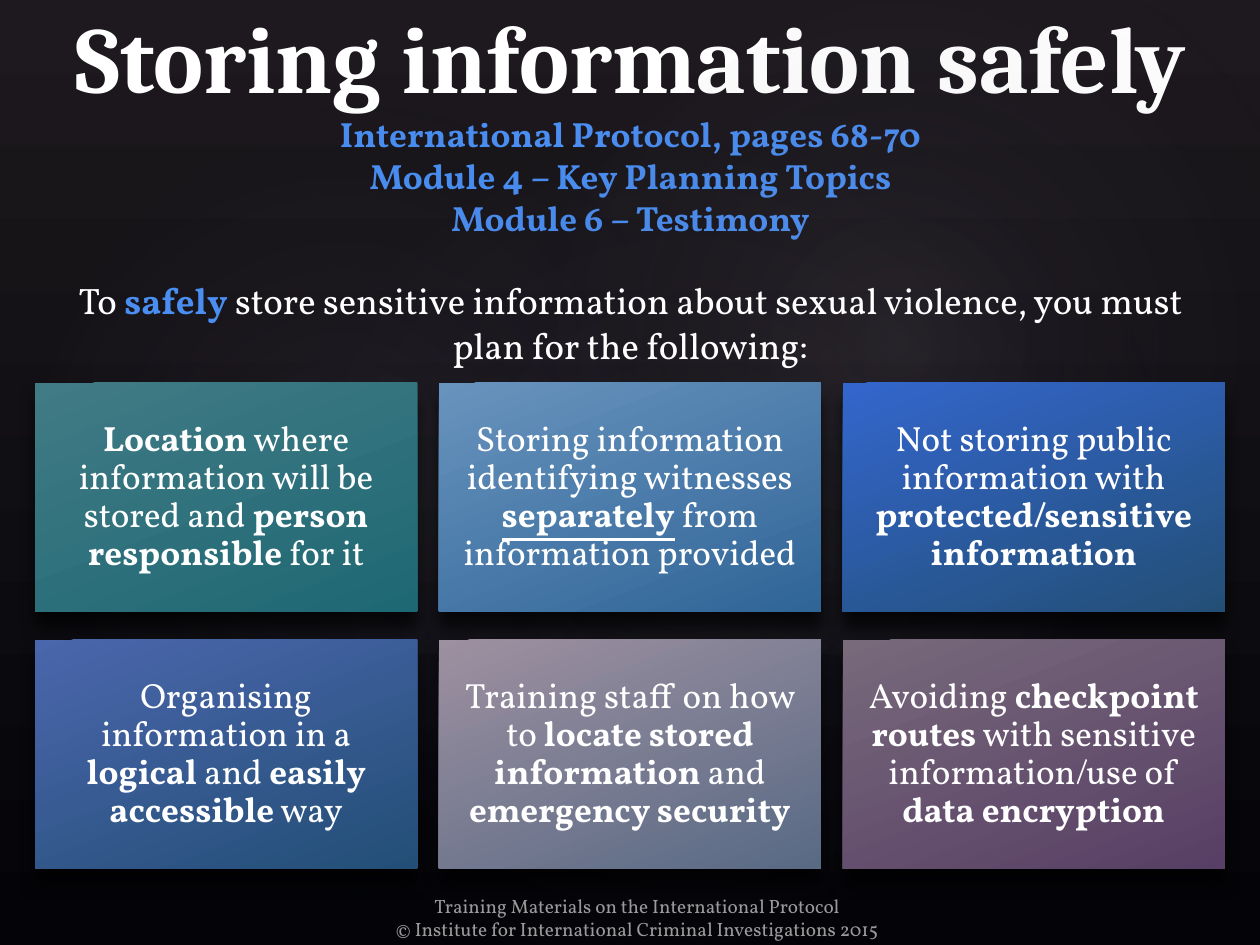
from lxml.etree import SubElement
from pptx import Presentation
from pptx.dml.color import RGBColor
from pptx.enum.shapes import MSO_SHAPE as Shape
from pptx.enum.text import MSO_ANCHOR as Anchor, MSO_AUTO_SIZE as AutoSize, PP_ALIGN as Align
from pptx.oxml import parse_xml
from pptx.oxml.ns import nsdecls, qn
from pptx.util import Cm, Pt

WHITE = RGBColor(0xFF, 0xFF, 0xFF)
GREY = RGBColor(0x9A, 0x9A, 0x9B)
BLUE = RGBColor(0x4A, 0x8E, 0xF2)
BACKGROUND_TOP = RGBColor(0x1D, 0x19, 0x1E)
BACKGROUND_BOTTOM = RGBColor(0x04, 0x04, 0x08)
GLOW = RGBColor(0xC4, 0xBC, 0xC6)
GLOW_EDGE = RGBColor(0x24, 0x28, 0x52)
TEAL, TEAL_DARK = RGBColor(0x41, 0x7B, 0x85), RGBColor(0x1E, 0x68, 0x74)
SKY, SKY_DARK = RGBColor(0x68, 0x93, 0xBD), RGBColor(0x30, 0x65, 0x98)
ROYAL, NAVY = RGBColor(0x33, 0x66, 0xCC), RGBColor(0x23, 0x4F, 0x77)
INDIGO = RGBColor(0x4A, 0x66, 0xAC)
MAUVE, SLATE = RGBColor(0x9D, 0x90, 0xA0), RGBColor(0x59, 0x6A, 0x85)
PLUM, PURPLE = RGBColor(0x78, 0x69, 0x7B), RGBColor(0x57, 0x3F, 0x65)

HEADING_FONT, BODY_FONT = "Cambria", "Vollkorn"

TITLE_LINES = [
    "Storing information safely",
    "International Protocol, pages 68-70",
    "Module 4 – Key Planning Topics",
    "Module 6 – Testimony",
]
INTRO = [
    ("To ", ""),
    ("safely", "bold accent"),
    (" store sensitive information about sexual violence, you must plan for the following:", ""),
]
FOOTER_LINES = [
    "Training Materials on the International Protocol",
    "© Institute for International Criminal Investigations 2015",
]
CARDS = [
    (TEAL, TEAL_DARK, [
        ("Location", "bold"), (" where information will be stored and ", ""),
        ("person responsible", "bold"), (" for it", "")]),
    (SKY, SKY_DARK, [
        ("Storing information identifying witnesses ", ""),
        ("separately", "bold underline"), (" from information provided", "")]),
    (ROYAL, NAVY, [
        ("Not storing public information with ", ""),
        ("protected/sensitive information", "bold")]),
    (INDIGO, NAVY, [
        ("Organising information in a ", ""), ("logical", "bold"), (" and ", ""),
        ("easily accessible", "bold"), (" way", "")]),
    (MAUVE, SLATE, [
        ("Training staff on how to ", ""), ("locate stored information ", "bold"),
        ("and ", ""), ("emergency security", "bold")]),
    (PLUM, PURPLE, [
        ("Avoiding ", ""), ("checkpoint routes", "bold"),
        (" with sensitive information/use of ", ""), ("data encryption", "bold")]),
]
GLOWS = [
    (3.81, 2.9, 20.12, 15.85, 328.7, 7),
    (-0.76, 3.25, 15.39, 12.45, 294.3, 8),
    (9.09, 0.33, 18.01, 13.21, 328.7, 8),
]


def format_run(run, size, color, name=BODY_FONT, bold=False):
    """Set the typeface, size, colour and weight of a run."""
    run.font.name, run.font.size, run.font.bold = name, Pt(size), bold
    run.font.color.rgb = color


def add_styled_runs(paragraph, parts, size):
    """Fill a centred paragraph with runs styled by keyword."""
    paragraph.alignment = Align.CENTER
    for text, style in parts:
        run = paragraph.add_run()
        run.text = text
        format_run(run, size, BLUE if "accent" in style else WHITE, bold="bold" in style)
        if "underline" in style:
            run.font.underline = True


def set_gradient(fill, start, end, angle):
    """Apply a two-colour linear gradient."""
    fill.gradient()
    fill.gradient_angle = angle
    for stop, color in zip(fill.gradient_stops, (start, end)):
        stop.color.rgb = color


def add_glow(slide, left, top, width, height, rotation, opacity):
    """Add a soft radial ellipse of light."""
    shape = slide.shapes.add_shape(Shape.OVAL, Cm(left), Cm(top), Cm(width), Cm(height))
    shape.rotation = rotation
    shape.shadow.inherit = False
    shape.line.fill.background()
    properties = shape.element.spPr
    properties.find(qn("a:prstGeom")).addnext(parse_xml(
        f'<a:gradFill {nsdecls("a")}><a:gsLst>'
        f'<a:gs pos="0"><a:srgbClr val="{GLOW}"><a:alpha val="{opacity * 1000}"/></a:srgbClr></a:gs>'
        f'<a:gs pos="58000"><a:srgbClr val="{GLOW_EDGE}"><a:alpha val="0"/></a:srgbClr></a:gs>'
        '</a:gsLst><a:path path="circle"><a:fillToRect l="50000" t="50000" r="50000" b="50000"/>'
        '</a:path></a:gradFill>'))


def add_drop_shadow(shape):
    """Give a shape a soft black shadow below it."""
    shape.shadow.inherit = False
    effects = shape.element.spPr.find(qn("a:effectLst"))
    shadow = SubElement(effects, qn("a:outerShdw"), blurRad=str(Pt(9)), dist=str(Pt(9)),
                        dir="5400000", algn="ctr", rotWithShape="0")
    color = SubElement(shadow, qn("a:srgbClr"), val="000000")
    SubElement(color, qn("a:alpha"), val="70000")


def add_card(slide, index, start, end, parts):
    """Add one card of the three-column grid."""
    row, column = divmod(index, 3)
    shape = slide.shapes.add_shape(Shape.RECTANGLE, Cm(0.71 + 8.14 * column),
                                   Cm(7.72 + 5.18 * row), Cm(7.7), Cm(4.6))
    set_gradient(shape.fill, start, end, 291)
    shape.line.fill.background()
    add_drop_shadow(shape)
    frame = shape.text_frame
    frame.word_wrap = True
    frame.vertical_anchor = Anchor.MIDDLE
    frame.margin_left = frame.margin_right = Cm(0.21)
    frame.margin_top = frame.margin_bottom = Cm(0.23)
    paragraph = frame.paragraphs[0]
    paragraph.line_spacing = 0.9
    add_styled_runs(paragraph, parts, 20)


def add_text_box(slide, left, top, width, height):
    """Add a wrapping text box and return its text frame."""
    frame = slide.shapes.add_textbox(Cm(left), Cm(top), Cm(width), Cm(height)).text_frame
    frame.word_wrap = True
    return frame


def add_title(slide):
    """Fill the title placeholder with the heading and its references."""
    title = slide.shapes.title
    title.left, title.top, title.width, title.height = Cm(0.71), Cm(0.74), Cm(24), Cm(4.19)
    frame = title.text_frame
    frame.auto_size = AutoSize.NONE
    frame.vertical_anchor = Anchor.BOTTOM
    paragraph = frame.paragraphs[0]
    paragraph.text = "\v".join(TITLE_LINES)
    paragraph.alignment = Align.CENTER
    heading, *references = paragraph.runs
    format_run(heading, 54, WHITE, HEADING_FONT, True)
    for run in references:
        format_run(run, 20, BLUE, bold=True)
    for line_break in paragraph._p.findall(qn("a:br")):
        SubElement(line_break, qn("a:rPr"), sz="2000")


def add_intro(slide):
    """Add the sentence that introduces the cards."""
    frame = add_text_box(slide, 0.71, 5.33, 24, 2.21)
    frame.vertical_anchor = Anchor.MIDDLE
    frame.margin_top = Cm(0.25)
    paragraph = frame.paragraphs[0]
    paragraph.space_before = Pt(4)
    add_styled_runs(paragraph, INTRO, 21)


def add_footer(slide):
    """Add the two centred footer lines."""
    frame = add_text_box(slide, 6.5, 17.91, 12.7, 1.02)
    frame.text = "\n".join(FOOTER_LINES)
    for paragraph in frame.paragraphs:
        paragraph.alignment = Align.CENTER
        format_run(paragraph.runs[0], 11, GREY)


def main():
    """Build the slide and save it."""
    presentation = Presentation()
    presentation.slide_width, presentation.slide_height = Cm(25.4), Cm(19.05)
    slide = presentation.slides.add_slide(presentation.slide_layouts[5])
    set_gradient(slide.background.fill, BACKGROUND_TOP, BACKGROUND_BOTTOM, 270)
    for glow in GLOWS:
        add_glow(slide, *glow)
    add_footer(slide)
    add_intro(slide)
    add_title(slide)
    for index, card in enumerate(CARDS):
        add_card(slide, index, *card)
    presentation.save("out.pptx")


if __name__ == "__main__":
    main()
